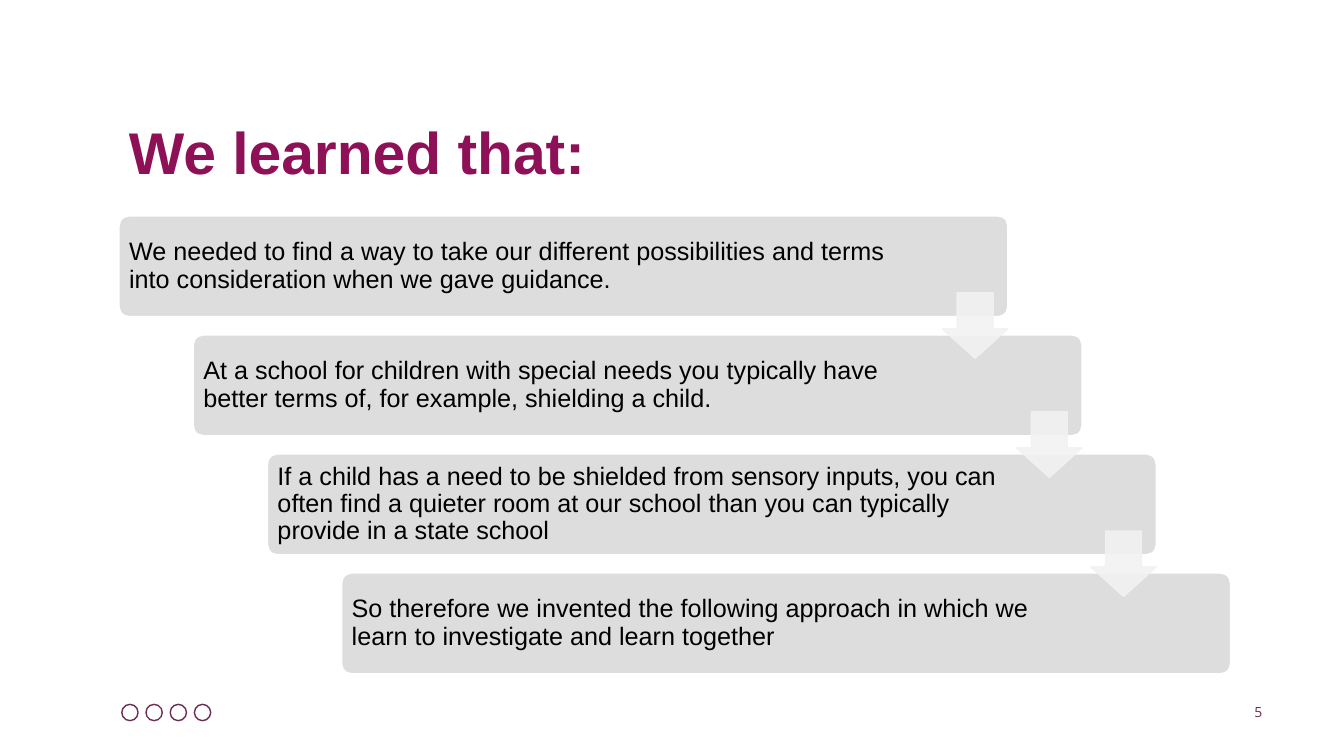
from dataclasses import dataclass

from lxml.etree import SubElement
from pptx import Presentation
from pptx.dml.color import RGBColor
from pptx.enum.shapes import MSO_SHAPE as Shape
from pptx.enum.text import MSO_ANCHOR as Anchor, PP_ALIGN as Align
from pptx.oxml.ns import qn
from pptx.util import Cm, Pt

COLORS = {
    "title": "8E1157",
    "accent": "6B2D52",
    "card": "DDDDDD",
    "edge": "FFFFFF",
    "arrow": "F2F2F2",
    "text": "000000",
}

CARD_LEFT, CARD_TOP, CARD_W, CARD_H = 3.0, 5.44, 22.4, 2.54
STEP_X, STEP_Y = 1.87, 3.0
ARROW_DX, ARROW_DY, ARROW_SIZE = 20.75, 1.94, 1.65
DOT_LEFT, DOT_TOP, DOT_SIZE, DOT_STEP = 3.07, 17.75, 0.41, 0.61
DOT_COUNT = 4


@dataclass
class Lesson:
    text: str
    right_inset: float = 3.71


LESSONS = [
    Lesson("We needed to find a way to take our different possibilities and terms "
           "into consideration when we gave guidance.", right_inset=3.0),
    Lesson("At a school for children with special needs you typically have "
           "better terms of, for example, shielding a child."),
    Lesson("If a child has a need to be shielded from sensory inputs, you can "
           "often find a quieter room at our school than you can typically "
           "provide in a state school"),
    Lesson("So therefore we invented the following approach in which we "
           "learn to investigate and learn together"),
]


def rgb(name: str) -> RGBColor:
    return RGBColor.from_string(COLORS[name])


def write(sp, text: str, *, size: float, color: str = "text", font: str = "Arial",
          bold: bool = False, align=Align.LEFT, anchor=Anchor.MIDDLE,
          spacing: float = 1.0, insets=(0.25, 0.13, 0.25, 0.13)) -> None:
    """Fill a shape with one paragraph; insets are left, top, right, bottom in cm."""
    tf = sp.text_frame
    tf.word_wrap = True
    tf.vertical_anchor = anchor
    tf.margin_left, tf.margin_top, tf.margin_right, tf.margin_bottom = map(Cm, insets)
    p = tf.paragraphs[0]
    p.alignment = align
    p.line_spacing = spacing
    r = p.add_run()
    r.text = text
    r.font.name, r.font.size, r.font.bold = font, Pt(size), bold
    r.font.color.rgb = rgb(color)


def add_box(s, left: float, top: float, width: float, height: float):
    return s.shapes.add_textbox(Cm(left), Cm(top), Cm(width), Cm(height))


def add_shape(s, kind, left: float, top: float, width: float, height: float, *,
              line: str, fill: str | None = None, adjustments=()):
    sp = s.shapes.add_shape(kind, Cm(left), Cm(top), Cm(width), Cm(height))
    sp.shadow.inherit = False
    for i, value in enumerate(adjustments):
        sp.adjustments[i] = value
    if fill:
        sp.fill.solid()
        sp.fill.fore_color.rgb = rgb(fill)
    else:
        sp.fill.background()
    sp.line.color.rgb = rgb(line)
    sp.line.width = Pt(1)
    return sp


def set_opacity(sp, percent: int) -> None:
    """Apply the opacity to both fill and outline."""
    for color in sp._element.spPr.iter(qn("a:srgbClr")):
        SubElement(color, qn("a:alpha"), val=str(percent * 1000))


def add_card(s, index: int, lesson: Lesson) -> None:
    card = add_shape(s, Shape.ROUNDED_RECTANGLE, CARD_LEFT + index * STEP_X,
                     CARD_TOP + index * STEP_Y, CARD_W, CARD_H,
                     fill="card", line="edge", adjustments=(0.1,))
    write(card, lesson.text, size=18, spacing=0.9,
          insets=(0.18, 0.18, lesson.right_inset, 0.18))


def add_arrow(s, index: int) -> None:
    arrow = add_shape(s, Shape.DOWN_ARROW, CARD_LEFT + ARROW_DX + index * STEP_X,
                      CARD_TOP + ARROW_DY + index * STEP_Y, ARROW_SIZE, ARROW_SIZE,
                      fill="arrow", line="arrow", adjustments=(0.55, 0.45))
    set_opacity(arrow, 90)


def main() -> None:
    prs = Presentation()
    prs.slide_width, prs.slide_height = Cm(33.87), Cm(19.05)
    s = prs.slides.add_slide(prs.slide_layouts[6])

    for i in range(DOT_COUNT):
        add_shape(s, Shape.OVAL, DOT_LEFT + i * DOT_STEP, DOT_TOP,
                  DOT_SIZE, DOT_SIZE, line="accent")

    write(add_box(s, 3.0, 2.92, 28.0, 1.98), "We learned that:",
          size=42, color="title", bold=True, spacing=0.9)
    write(add_box(s, 29.82, 17.25, 2.24, 1.02), "5", size=10, color="accent",
          font="Open Sans", align=Align.RIGHT, anchor=Anchor.BOTTOM)

    for i, lesson in enumerate(LESSONS):
        add_card(s, i, lesson)
    for i in range(len(LESSONS) - 1):
        add_arrow(s, i)

    prs.save("out.pptx")


if __name__ == "__main__":
    main()
